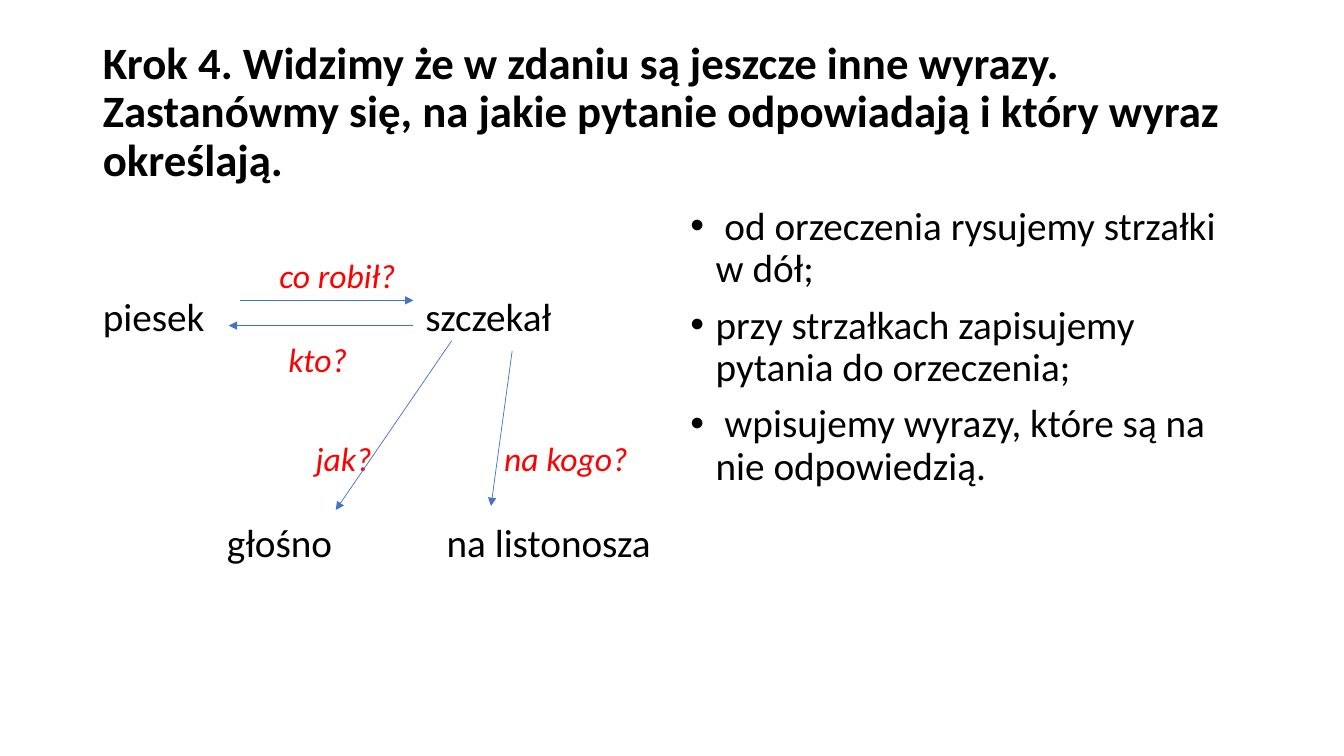
from lxml.etree import SubElement
from pptx import Presentation
from pptx.dml.color import RGBColor
from pptx.enum.shapes import MSO_CONNECTOR
from pptx.enum.text import MSO_ANCHOR, PP_ALIGN
from pptx.oxml.ns import qn
from pptx.util import Inches, Pt

BLACK = RGBColor(0x00, 0x00, 0x00)
RED = RGBColor(0xFF, 0x00, 0x00)
BLUE = RGBColor(0x44, 0x72, 0xC4)
FONT = "Calibri"
ASCENT = 0.95

HEADING = (
    "Krok 4. Widzimy że w zdaniu są jeszcze inne wyrazy. Zastanówmy się, "
    "na jakie pytanie odpowiadają i który wyraz określają."
)
STEPS = [
    " od orzeczenia rysujemy strzałki w dół;",
    "przy strzałkach zapisujemy pytania do orzeczenia;",
    " wpisujemy wyrazy, które są na nie odpowiedzią.",
]
WORDS = [
    ("piesek", 1.02, 3.27, 1.2),
    ("szczekał", 4.22, 3.27, 1.5),
    ("głośno", 2.25, 5.51, 1.3),
    ("na listonosza", 4.43, 5.51, 2.3),
]
QUESTIONS = [
    ("co robił?", 2.77, 2.85, 1.4),
    ("kto?", 2.86, 3.68, 0.9),
    ("jak?", 3.13, 4.66, 0.9),
    ("na kogo?", 5.0, 4.66, 1.5),
]
ARROWS = [
    (2.38, 2.98, 4.1, 2.98),
    (4.1, 3.23, 2.27, 3.23),
    (4.48, 3.38, 3.33, 5.06),
    (5.08, 3.48, 4.87, 5.02),
]


def write(frame, lines, size=28, color=BLACK, bold=False, italic=False,
          bulleted=False, spacing=0.9, before=0):
    """Fill a text frame with one formatted paragraph per line."""
    frame.word_wrap = True
    for index, line in enumerate(lines):
        paragraph = frame.paragraphs[0] if index == 0 else frame.add_paragraph()
        paragraph.alignment = PP_ALIGN.LEFT
        paragraph.line_spacing = spacing
        paragraph.space_before = Pt(before)
        run = paragraph.add_run()
        run.text = line
        run.font.name = FONT
        run.font.size = Pt(size)
        run.font.bold = bold
        run.font.italic = italic
        run.font.color.rgb = color
        if bulleted:
            properties = paragraph._p.get_or_add_pPr()
            properties.set("marL", str(Inches(0.25)))
            properties.set("indent", str(-Inches(0.25)))
            SubElement(properties, qn("a:buFont"), typeface="Arial")
            SubElement(properties, qn("a:buChar"), char="•")


def place_word(slide, text, left, baseline, width, size=28, **style):
    """Put a diagram word on its baseline."""
    top = baseline - ASCENT * size / 72
    box = slide.shapes.add_textbox(
        Inches(left), Inches(top), Inches(width), Inches(size / 60))
    frame = box.text_frame
    frame.margin_left = frame.margin_right = 0
    frame.margin_top = frame.margin_bottom = 0
    write(frame, [text], size=size, spacing=1.0, **style)


def draw_arrow(slide, ends):
    """Draw a thin blue arrow between two points."""
    arrow = slide.shapes.add_connector(
        MSO_CONNECTOR.STRAIGHT, *[Inches(value) for value in ends])
    arrow.line.color.rgb = BLUE
    arrow.line.width = Pt(0.5)
    SubElement(arrow.line._get_or_add_ln(), qn("a:tailEnd"), type="triangle")
    SubElement(arrow._element.spPr, qn("a:effectLst"))


def main():
    """Build the slide and save it."""
    deck = Presentation()
    deck.slide_width, deck.slide_height = Inches(13.33), Inches(7.5)
    slide = deck.slides.add_slide(deck.slide_layouts[5])

    title = slide.shapes.title
    title.left, title.top = Inches(0.92), Inches(0.4)
    title.width, title.height = Inches(11.5), Inches(1.45)
    title.text_frame.vertical_anchor = MSO_ANCHOR.MIDDLE
    write(title.text_frame, [HEADING], size=32, bold=True)

    for word in WORDS:
        place_word(slide, *word)
    for question in QUESTIONS:
        place_word(slide, *question, size=24, color=RED, italic=True)

    steps = slide.shapes.add_textbox(
        Inches(6.75), Inches(2), Inches(5.67), Inches(4.76))
    write(steps.text_frame, STEPS, bulleted=True, before=10)

    for ends in ARROWS:
        draw_arrow(slide, ends)

    deck.save("out.pptx")


if __name__ == "__main__":
    main()
